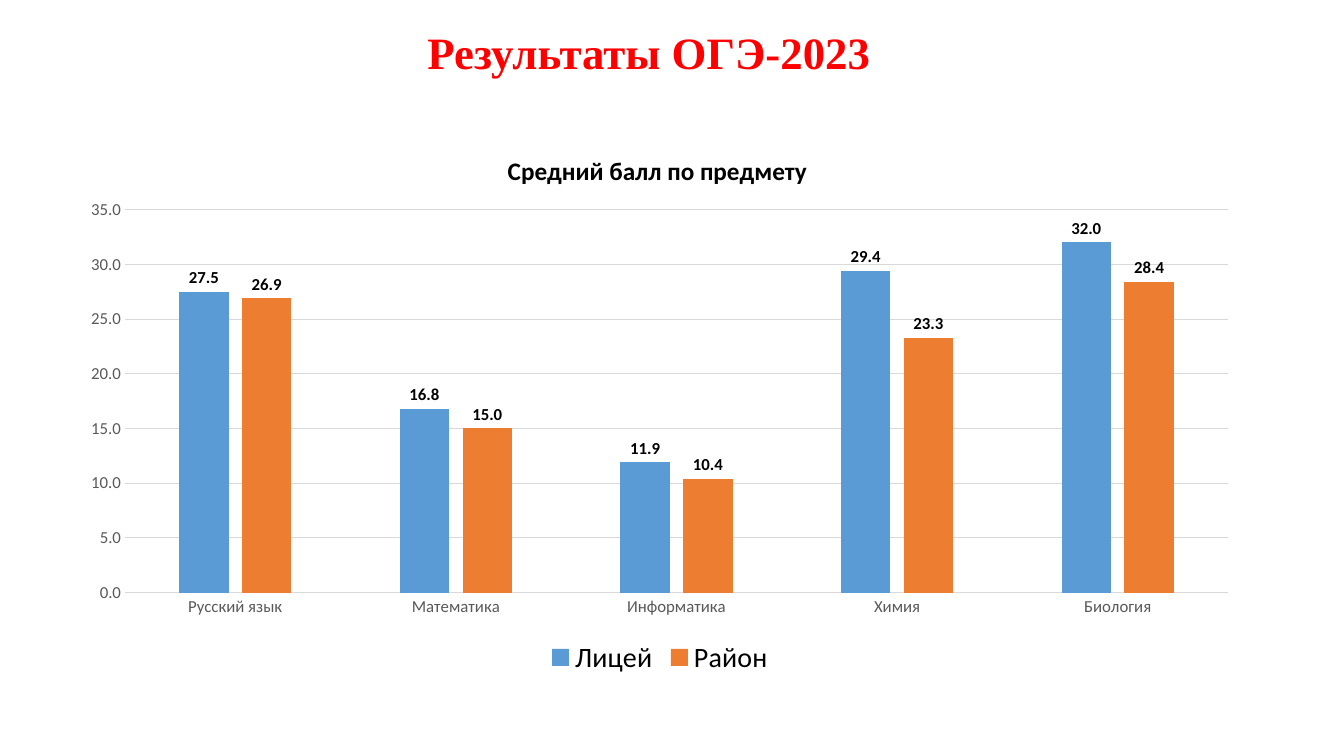
import pptx
import pptx.chart.data
import pptx.dml.color
import pptx.enum.chart
import pptx.enum.text
import pptx.oxml
import pptx.oxml.ns
import pptx.util

TITLE = "Результаты ОГЭ-2023"
CHART_TITLE = "Средний балл по предмету"
SUBJECTS = ["Русский язык", "Математика", "Информатика", "Химия", "Биология"]
SCORES = {
    "Лицей": (27.5, 16.8, 11.9, 29.4, 32.0),
    "Район": (26.9, 15.0, 10.4, 23.3, 28.4),
}
COLORS = {
    "title": "FF0000", "text": "000000", "axis": "595959", "grid": "D9D9D9",
    "Лицей": "5B9BD5", "Район": "ED7D31",
}
TITLE_BOX = (0.99, 0.23, 10.89, 0.64)
CHART_BOX = (0.67, 1.23, 11.75, 5.52)
PLOT_BOX = (1.24, 2.08, 10.94, 3.8)
CHART_TITLE_AT = (4.99, 1.48)
FORMATS = {
    "title": {"name": "Times New Roman", "size": 32, "bold": True, "color": "title"},
    "chart": {"name": "Calibri", "size": 10, "color": "text"},
    "chart title": {"name": "Calibri", "size": 18, "bold": True, "color": "text"},
    "axis": {"name": "Calibri", "size": 12, "bold": False, "color": "axis"},
    "legend": {"name": "Calibri", "size": 20, "bold": False, "color": "text"},
    "labels": {"name": "Calibri", "size": 12, "bold": True, "color": "text"},
}


def rgb(name):
    return pptx.dml.color.RGBColor.from_string(COLORS[name])


def format_font(font, style):
    for key, value in FORMATS[style].items():
        if key == "color":
            font.color.rgb = rgb(value)
        else:
            setattr(font, key, pptx.util.Pt(value) if key == "size" else value)


def format_line(line):
    line.color.rgb = rgb("grid")
    line.width = pptx.util.Pt(0.75)


def set_layout(parent, index, box, inner=False):
    for layout in parent.findall(pptx.oxml.ns.qn("c:layout")):
        parent.remove(layout)
    left, top, width, height = CHART_BOX
    fractions = [(box[0] - left) / width, (box[1] - top) / height]
    fractions += [length / whole for length, whole in zip(box[2:], (width, height))]
    target = '<c:layoutTarget val="inner"/>' if inner else ""
    modes = '<c:xMode val="edge"/><c:yMode val="edge"/>'
    values = "".join(f'<c:{tag} val="{value:.4f}"/>' for tag, value in zip("xywh", fractions))
    parent.insert(index, pptx.oxml.parse_xml(
        f'<c:layout {pptx.oxml.ns.nsdecls("c")}><c:manualLayout>'
        f"{target}{modes}{values}</c:manualLayout></c:layout>"))


def add_title(slide):
    frame = slide.shapes.add_textbox(*map(pptx.util.Inches, TITLE_BOX)).text_frame
    frame.word_wrap = True
    frame.vertical_anchor = pptx.enum.text.MSO_ANCHOR.MIDDLE
    paragraph = frame.paragraphs[0]
    paragraph.alignment = pptx.enum.text.PP_ALIGN.CENTER
    paragraph.line_spacing = 0.9
    run = paragraph.add_run()
    run.text = TITLE
    format_font(run.font, "title")


def add_score_chart(slide):
    data = pptx.chart.data.CategoryChartData(number_format="0.0")
    data.categories = SUBJECTS
    for name, values in SCORES.items():
        data.add_series(name, values)
    chart = slide.shapes.add_chart(
        pptx.enum.chart.XL_CHART_TYPE.COLUMN_CLUSTERED,
        *map(pptx.util.Inches, CHART_BOX), data).chart
    format_font(chart.font, "chart")

    chart.has_title = True
    paragraph = chart.chart_title.text_frame.paragraphs[0]
    run = paragraph.add_run()
    run.text = CHART_TITLE
    format_font(run.font, "chart title")

    chart.has_legend = True
    chart.legend.position = pptx.enum.chart.XL_LEGEND_POSITION.BOTTOM
    chart.legend.include_in_layout = False
    format_font(chart.legend.font, "legend")

    for axis in (chart.category_axis, chart.value_axis):
        axis.major_tick_mark = pptx.enum.chart.XL_TICK_MARK.NONE
        axis.minor_tick_mark = pptx.enum.chart.XL_TICK_MARK.NONE
        format_font(axis.tick_labels.font, "axis")
    format_line(chart.category_axis.format.line)
    value_axis = chart.value_axis
    value_axis.format.line.fill.background()
    value_axis.has_major_gridlines = True
    format_line(value_axis.major_gridlines.format.line)
    value_axis.minimum_scale, value_axis.maximum_scale, value_axis.major_unit = 0, 35, 5
    value_axis.tick_labels.number_format = "0.0"
    value_axis.tick_labels.number_format_is_linked = False

    plot = chart.plots[0]
    plot.vary_by_categories = False
    plot.gap_width = 219
    plot.overlap = -27
    for series in plot.series:
        series.format.fill.solid()
        series.format.fill.fore_color.rgb = rgb(series.name)
        labels = series.data_labels
        labels.show_value = True
        labels.number_format = "0.0"
        labels.number_format_is_linked = False
        labels.position = pptx.enum.chart.XL_LABEL_POSITION.OUTSIDE_END
        format_font(labels.font, "labels")

    chart_element = chart.element.find(pptx.oxml.ns.qn("c:chart"))
    set_layout(chart_element.find(pptx.oxml.ns.qn("c:title")), 1, CHART_TITLE_AT)
    set_layout(chart_element.find(pptx.oxml.ns.qn("c:plotArea")), 0, PLOT_BOX, inner=True)


def main():
    """Build the slide with the average exam scores by subject."""
    presentation = pptx.Presentation()
    presentation.slide_width = pptx.util.Inches(13.33)
    presentation.slide_height = pptx.util.Inches(7.5)
    slide = presentation.slides.add_slide(presentation.slide_layouts[6])
    add_title(slide)
    add_score_chart(slide)
    presentation.save("out.pptx")


if __name__ == "__main__":
    main()
